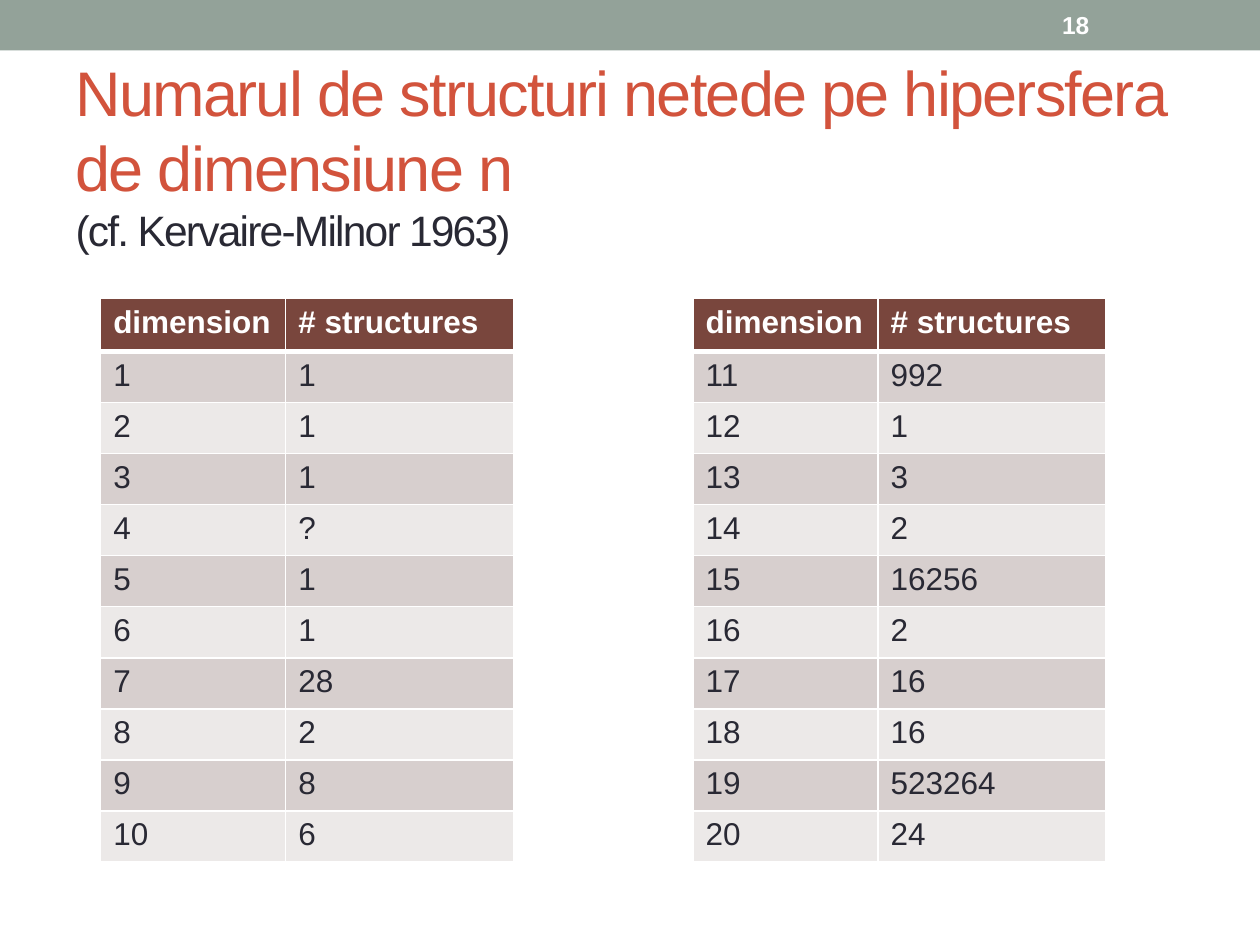
from lxml import etree
from pptx import Presentation
from pptx.dml.color import RGBColor
from pptx.enum.shapes import MSO_SHAPE
from pptx.enum.text import MSO_ANCHOR, MSO_AUTO_SIZE, PP_ALIGN
from pptx.oxml.ns import qn
from pptx.util import Cm, Pt

RECTANGLE = MSO_SHAPE.RECTANGLE
MIDDLE = MSO_ANCHOR.MIDDLE
LEFT = PP_ALIGN.LEFT
NO_AUTOFIT = MSO_AUTO_SIZE.NONE
TITLE_ONLY = 5

FONT = "Arial"
COLORS = {
    "band": "93A299",
    "title": "D2533C",
    "text": "292934",
    "white": "FFFFFF",
    "header": "79463D",
    "odd": "D7CFCE",
    "even": "ECE9E8",
}
HEADINGS = ("dimension", "# structures")
STRUCTURES = (
    "1", "1", "1", "?", "1", "1", "28", "2", "8", "6",
    "992", "1", "3", "2", "16256", "2", "16", "16", "523264", "24",
)
ROWS_PER_TABLE = 10
TABLE_LEFTS = (2.03, 13.97)
TABLE_TOP = 6.02
COLUMN_WIDTHS = (3.73, 4.6)
HEADER_HEIGHT = 1.06
ROW_HEIGHT = 1.03


def color(name):
    return RGBColor.from_string(COLORS[name])


def add_span(para, text, size, color_name, bold=False):
    span = para.add_run()
    span.text = text
    span.font.name = FONT
    span.font.size = Pt(size)
    span.font.bold = bold
    span.font.color.rgb = color(color_name)
    return span


def add_band(page, width):
    band = page.shapes.add_shape(RECTANGLE, 0, 0, width, Cm(1.02))
    band.shadow.inherit = False
    band.fill.solid()
    band.fill.fore_color.rgb = color("band")
    band.line.fill.background()


def fill_title(page):
    title = page.shapes.title
    title.left, title.top, title.width, title.height = Cm(1.27), Cm(1.47), Cm(22.86), Cm(3.28)
    frame = title.text_frame
    frame.word_wrap = True
    frame.auto_size = NO_AUTOFIT
    frame.vertical_anchor = MIDDLE
    para = frame.paragraphs[0]
    para.alignment = LEFT
    heading = add_span(para, "Numarul de structuri netede pe hipersfera de dimensiune n ", 36, "title")
    para.add_line_break()
    line_break = para._p.find(qn("a:br"))
    etree.SubElement(line_break, qn("a:rPr"), sz="3600")
    source = add_span(para, "(cf. Kervaire-Milnor 1963)", 24.3, "text")
    for span in (heading, source):
        span.font._element.set("spc", "-100")


def add_page_number(page):
    box = page.shapes.add_textbox(Cm(21.16), Cm(0.05), Cm(2.97), Cm(0.91))
    frame = box.text_frame
    frame.word_wrap = True
    frame.vertical_anchor = MIDDLE
    add_span(frame.paragraphs[0], "18", 14, "white", bold=True)


def set_borders(cell, top, bottom):
    properties = cell._tc.get_or_add_tcPr()
    for side, points in (("lnL", 1), ("lnR", 1), ("lnT", top), ("lnB", bottom)):
        line = etree.SubElement(properties, qn(f"a:{side}"), w=str(Pt(points)))
        fill = etree.SubElement(line, qn("a:solidFill"))
        etree.SubElement(fill, qn("a:srgbClr"), val=COLORS["white"])


def format_cell(cell, text, row):
    is_header = row == 0
    set_borders(cell, top=3 if row == 1 else 1, bottom=3 if is_header else 1)
    cell.fill.solid()
    fill_name = "header" if is_header else ("even", "odd")[row % 2]
    cell.fill.fore_color.rgb = color(fill_name)
    text_color = "white" if is_header else "text"
    add_span(cell.text_frame.paragraphs[0], text, 18, text_color, bold=is_header)


def add_structure_table(page, left, first):
    values = STRUCTURES[first:first + ROWS_PER_TABLE]
    rows = [HEADINGS] + [(str(n), value) for n, value in enumerate(values, first + 1)]
    height = HEADER_HEIGHT + ROW_HEIGHT * len(values)
    table = page.shapes.add_table(
        len(rows), len(HEADINGS), Cm(left), Cm(TABLE_TOP), Cm(sum(COLUMN_WIDTHS)), Cm(height)
    ).table
    for column, width in zip(table.columns, COLUMN_WIDTHS):
        column.width = Cm(width)
    for index, texts in enumerate(rows):
        table.rows[index].height = Cm(ROW_HEIGHT if index else HEADER_HEIGHT)
        for column, text in enumerate(texts):
            format_cell(table.cell(index, column), text, index)


def main():
    deck = Presentation()
    deck.slide_width, deck.slide_height = Cm(25.4), Cm(19.05)
    page = deck.slides.add_slide(deck.slide_layouts[TITLE_ONLY])
    add_band(page, deck.slide_width)
    fill_title(page)
    for index, left in enumerate(TABLE_LEFTS):
        add_structure_table(page, left, index * ROWS_PER_TABLE)
    add_page_number(page)
    deck.save("out.pptx")


if __name__ == "__main__":
    main()
